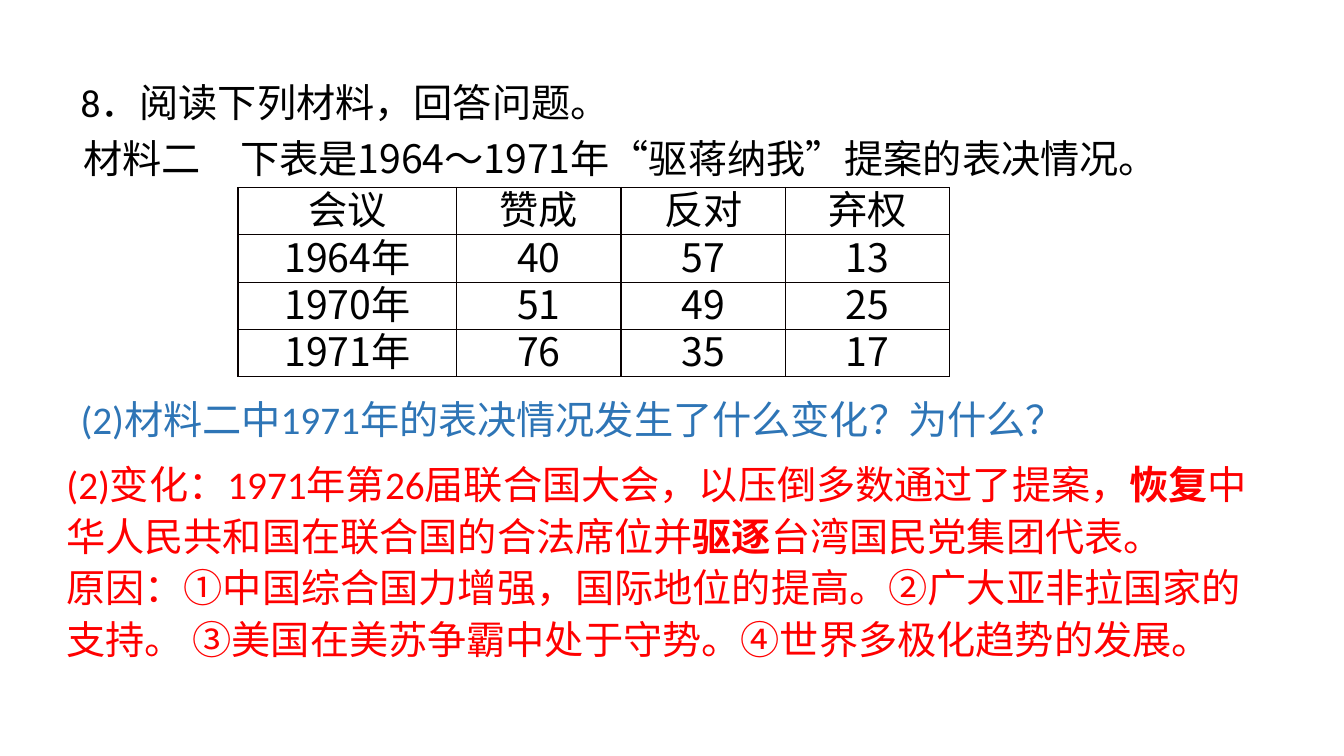
"""Build the slide on the 1964–1971 vote table with its question and answer."""
from lxml.etree import SubElement
from pptx import Presentation
from pptx.dml.color import RGBColor
from pptx.enum.text import MSO_ANCHOR, MSO_AUTO_SIZE, PP_ALIGN
from pptx.oxml.ns import qn
from pptx.util import Inches, Pt

CJK = "Noto Sans CJK SC"
BLACK, BLUE, RED = "000000", "2E75B6", "FF0000"


def add_run(p, text, color=BLACK, font="Calibri", bold=False):
    r = p.add_run()
    r.text = text
    r.font.size = Pt(28)
    r.font.name = font
    r.font.bold = bold
    r.font.color.rgb = RGBColor.from_string(color)
    SubElement(r.font._element, qn("a:ea"), typeface=CJK)


def fill_text(sp, box, paragraphs, spacing=1.0, **fmt):
    sp.left, sp.top, sp.width, sp.height = [Inches(v) for v in box]
    tf = sp.text_frame
    tf.word_wrap = True
    tf.auto_size = MSO_AUTO_SIZE.NONE
    tf.vertical_anchor = MSO_ANCHOR.TOP
    for i, runs in enumerate(paragraphs):
        p = tf.add_paragraph() if i else tf.paragraphs[0]
        p.alignment = PP_ALIGN.LEFT
        p.line_spacing = spacing
        for j, text in enumerate(runs):
            add_run(p, text, bold=j % 2 == 1, **fmt)


prs = Presentation()
prs.slide_width, prs.slide_height = Inches(13.33), Inches(7.5)
s = prs.slides.add_slide(prs.slide_layouts[5])

fill_text(s.shapes.title, (0.7, 0.63, 12.63, 1.23), [["8．阅读下列材料，回答问题。"]], spacing=1.2)

answer = [
    ["(2)变化：1971年第26届联合国大会，以压倒多数通过了提案，", "恢复",
     "中华人民共和国在联合国的合法席位并", "驱逐", "台湾国民党集团代表。"],
    ["原因：①中国综合国力增强，国际地位的提高。②广大亚非拉国家的支持。 "
     "③美国在美苏争霸中处于守势。④世界多极化趋势的发展。"],
]
texts = [
    ((0.7, 3.87, 12.38, 0.57), [["(2)材料二中1971年的表决情况发生了什么变化？为什么？"]],
     dict(color=BLUE)),
    ((0.56, 4.47, 12.21, 2.17), answer, dict(color=RED, spacing=1.1)),
    ((0.73, 1.28, 11.87, 0.57), [["材料二　下表是1964～1971年“驱蒋纳我”提案的表决情况。"]],
     dict(font=CJK)),
]
for box, paragraphs, fmt in texts:
    fill_text(s.shapes.add_textbox(0, 0, 0, 0), box, paragraphs, **fmt)

votes = [
    ["会议", "赞成", "反对", "弃权"],
    ["1964年", "40", "57", "13"],
    ["1970年", "51", "49", "25"],
    ["1971年", "76", "35", "17"],
]
table = s.shapes.add_table(4, 4, Inches(2.36), Inches(1.86), Inches(7.07), Inches(1.87)).table
for col, width in zip(table.columns, (2.17, 1.63, 1.63, 1.63)):
    col.width = Inches(width)
for row, values in zip(table.rows, votes):
    row.height = Inches(0.47)
    for cell, value in zip(row.cells, values):
        cell.margin_left = cell.margin_right = Inches(0.07)
        cell.margin_top = cell.margin_bottom = 0
        cell.vertical_anchor = MSO_ANCHOR.MIDDLE
        p = cell.text_frame.paragraphs[0]
        p.alignment = PP_ALIGN.CENTER
        p.line_spacing = 0.8
        add_run(p, value, font=CJK)
        tcPr = cell._tc.get_or_add_tcPr()
        for side in ("a:lnL", "a:lnR", "a:lnT", "a:lnB"):
            ln = SubElement(tcPr, qn(side), w=str(Pt(1)))
            SubElement(SubElement(ln, qn("a:solidFill")), qn("a:srgbClr"), val="080000")
        cell.fill.background()

prs.save("out.pptx")
